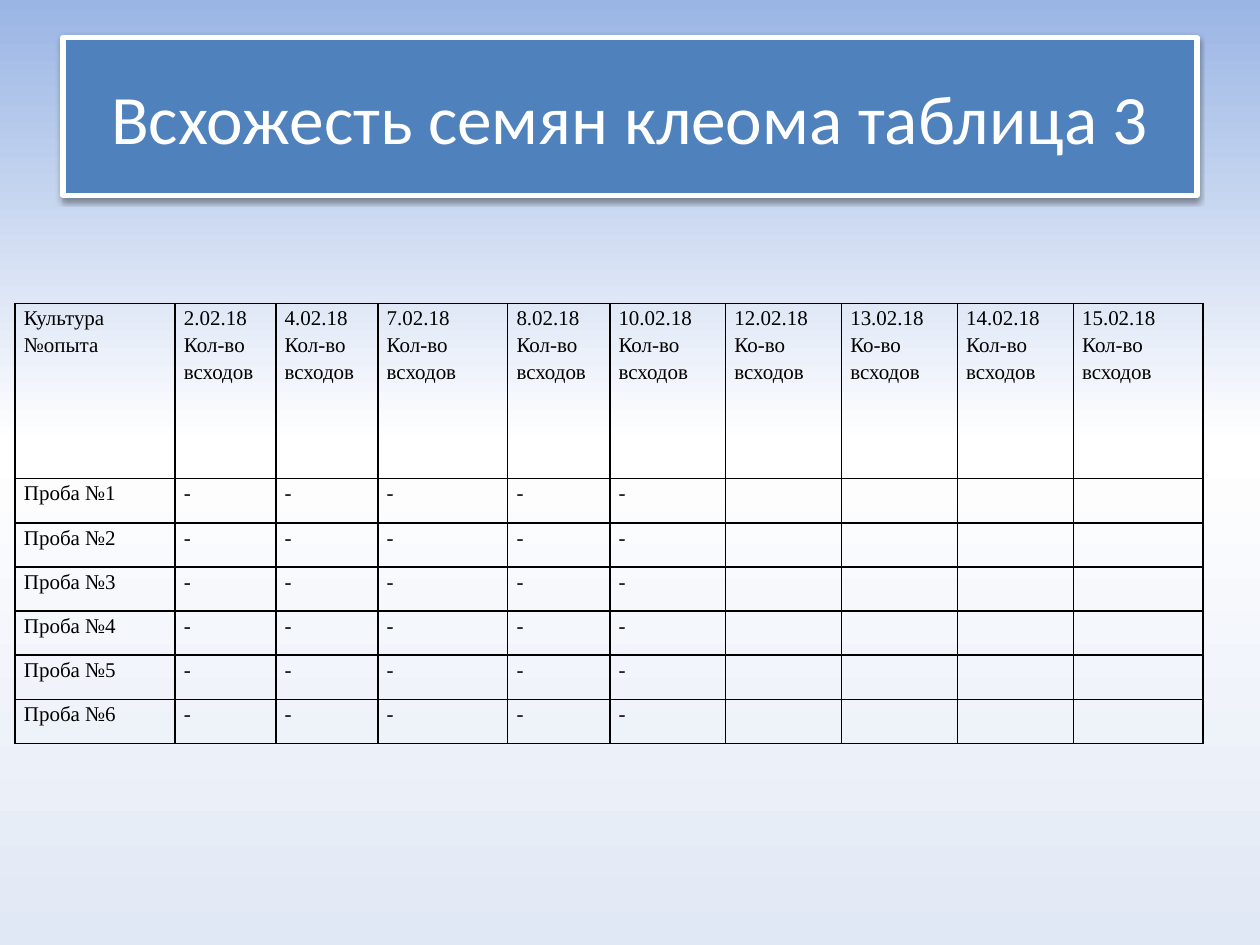
from lxml import etree
from pptx import Presentation
from pptx import util as u
from pptx.dml.color import RGBColor
from pptx.enum import text
from pptx.oxml import parse_xml
from pptx.oxml.ns import nsdecls, qn

COLORS = {"sky": "9AB5E4", "white": "FFFFFF", "mist": "E1E8F5",
          "banner": "4F81BD", "ink": "000000"}
COLUMN_WIDTHS = [1.27, 0.8, 0.81, 1.03, 0.81, 0.92, 0.92, 0.92, 0.92, 1.03]
ROW_HEIGHTS = [1.39] + [0.35] * 6
DATES = ["2", "4", "7", "8", "10", "12", "13", "14", "15"]
SHORT_LABEL_DATES = ("12", "13")  # these columns read "Ко-во"
COUNTED_DATES = 5  # dates with a recorded "-"


def rgb(name):
    return RGBColor.from_string(COLORS[name])


def paint_background(slide):
    fill = slide.background.fill
    fill.gradient()
    fill.gradient_angle = 270
    stops = next(slide.element.iter(qn("a:gsLst")))
    for stop in list(stops):
        stops.remove(stop)
    for position, name in ((0, "sky"), (47, "white"), (100, "mist")):
        stop = etree.SubElement(stops, qn("a:gs"), pos=str(position * 1000))
        etree.SubElement(stop, qn("a:srgbClr"), val=COLORS[name])


def add_banner(slide, left, top, width, height):
    banner = slide.shapes.title
    banner.left, banner.top = u.Inches(left), u.Inches(top)
    banner.width, banner.height = u.Inches(width), u.Inches(height)
    banner.fill.solid()
    banner.fill.fore_color.rgb = rgb("banner")
    banner.line.color.rgb = rgb("white")
    banner.line.width = u.Pt(3)
    banner._element.spPr.append(parse_xml(
        f'<a:effectLst {nsdecls("a")}>'
        f'<a:outerShdw blurRad="{u.Pt(3.1)}" dist="{u.Pt(1.6)}" dir="5400000" rotWithShape="0">'
        f'<a:srgbClr val="{COLORS["ink"]}"><a:alpha val="38000"/></a:srgbClr>'
        '</a:outerShdw></a:effectLst>'))

    frame = banner.text_frame
    frame.text = "Всхожесть семян клеома таблица 3"
    frame.vertical_anchor = text.MSO_ANCHOR.MIDDLE
    heading = frame.paragraphs[0]
    heading.alignment = text.PP_ALIGN.CENTER
    heading.font.name = "Calibri"
    heading.font.size = u.Pt(39.6)
    heading.font.color.rgb = rgb("white")


def germination_rows():
    header = ["Культура\n№опыта"]
    for day in DATES:
        label = "Ко-во" if day in SHORT_LABEL_DATES else "Кол-во"
        header.append(f"{day}.02.18\n{label}\nвсходов")
    counts = ["-"] * COUNTED_DATES + [""] * (len(DATES) - COUNTED_DATES)
    return [header] + [[f"Проба №{n}"] + counts for n in range(1, 7)]


def add_borders(cell):
    properties = cell._tc.get_or_add_tcPr()
    for index, side in enumerate(("lnL", "lnR", "lnT", "lnB")):
        properties.insert(index, parse_xml(
            f'<a:{side} {nsdecls("a")} w="{u.Pt(1)}"><a:solidFill>'
            f'<a:srgbClr val="{COLORS["ink"]}"/></a:solidFill></a:{side}>'))


def format_cell(cell, words):
    cell.text = words
    cell.margin_left = cell.margin_right = u.Inches(0.07)
    cell.margin_top = cell.margin_bottom = 0
    cell.fill.background()
    add_borders(cell)
    for paragraph in cell.text_frame.paragraphs:
        paragraph.alignment = text.PP_ALIGN.JUSTIFY
        paragraph.line_spacing = 1.15
        paragraph.font.name = "Times New Roman"
        paragraph.font.size = u.Pt(12)
        paragraph.font.color.rgb = rgb("ink")


def add_germination_table(slide, left, top, width, height):
    rows = germination_rows()
    table = slide.shapes.add_table(
        len(rows), len(rows[0]), u.Inches(left), u.Inches(top),
        u.Inches(width), u.Inches(height)).table
    table.first_row = table.horz_banding = False
    for column, column_width in zip(table.columns, COLUMN_WIDTHS):
        column.width = u.Inches(column_width)
    for row, row_height, entries in zip(table.rows, ROW_HEIGHTS, rows):
        row.height = u.Inches(row_height)
        for cell, words in zip(row.cells, entries):
            format_cell(cell, words)


def main():
    deck = Presentation()
    deck.slide_width, deck.slide_height = u.Inches(10), u.Inches(7.5)
    slide = deck.slides.add_slide(deck.slide_layouts.get_by_name("Title Only"))
    paint_background(slide)
    add_banner(slide, 0.5, 0.3, 9, 1.25)
    add_germination_table(slide, 0.12, 2.41, sum(COLUMN_WIDTHS), sum(ROW_HEIGHTS))
    deck.save("out.pptx")


if __name__ == "__main__":
    main()
